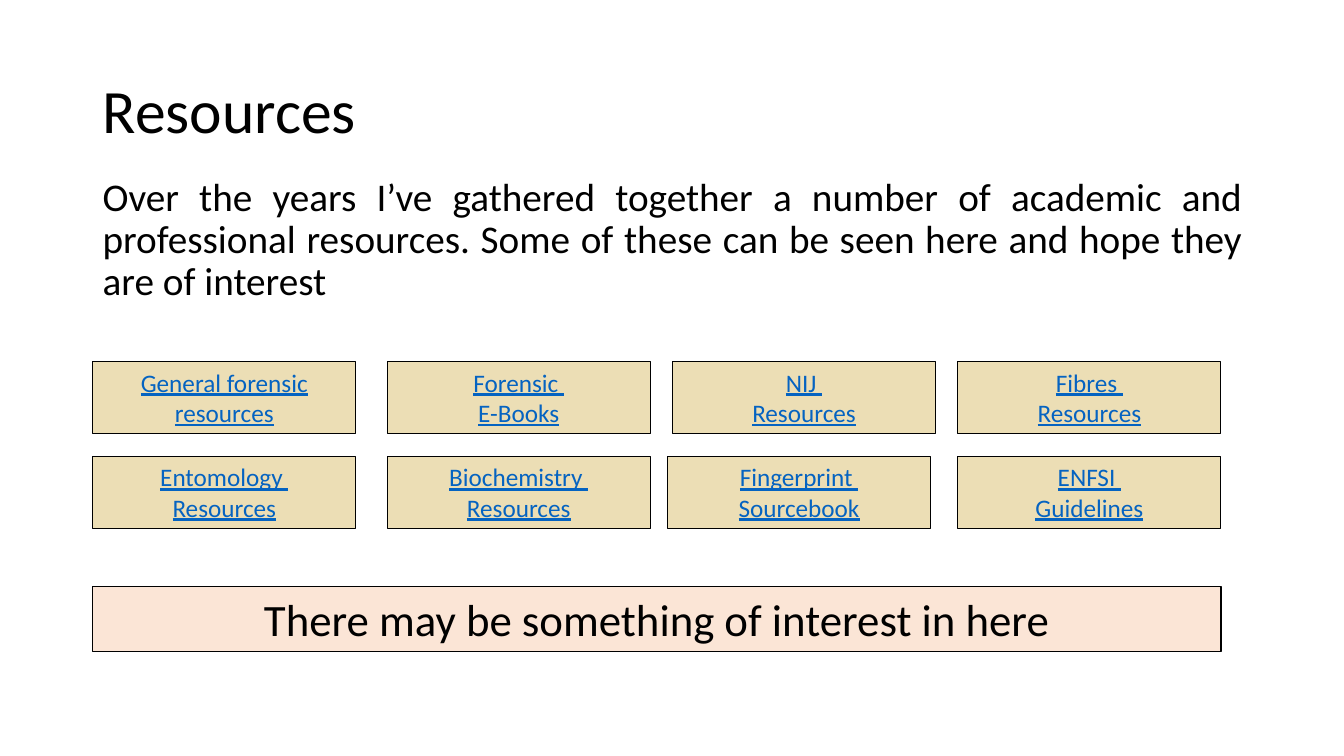
"""Build the Resources slide."""
import pptx
import pptx.dml.color
import pptx.enum.shapes
import pptx.enum.text
import pptx.oxml.ns
import pptx.util
from lxml import etree

Inches = pptx.util.Inches
ALIGN = pptx.enum.text.PP_ALIGN
ANCHOR = pptx.enum.text.MSO_ANCHOR
FIT = pptx.enum.text.MSO_AUTO_SIZE

COLORS = {"text": "000000", "link": "0563C1", "gold": "BF9000", "peach": "FBE5D6"}
LEFT = 0.92
COLS = [LEFT, 3.84, 6.67, 9.5]
ROWS = [3.59, 4.53]
LABELS = [
    ["General forensic resources", "Forensic \nE-Books", "NIJ \nResources", "Fibres \nResources"],
    ["Entomology \nResources", "Biochemistry \nResources", "Fingerprint \nSourcebook",
     "ENFSI \nGuidelines"],
]
NUDGE = {"Fingerprint \nSourcebook": -0.05}


def color(name):
    """Return the named colour."""
    return pptx.dml.color.RGBColor.from_string(COLORS[name])


def write(shape, text, size=18, ink="text", align=ALIGN.CENTER, anchor=ANCHOR.TOP,
          line=1.0, before=0, under=None, fit=FIT.SHAPE_TO_FIT_TEXT):
    """Fill a shape with text, one paragraph per line."""
    frame = shape.text_frame
    frame.word_wrap = True
    frame.auto_size = fit
    frame.vertical_anchor = anchor
    frame.text = text
    for para in frame.paragraphs:
        para.alignment = align
        para.line_spacing = line
        para.space_before = pptx.util.Pt(before)
        font = para.runs[0].font
        font.name = "Calibri"
        font.size = pptx.util.Pt(size)
        font.underline = under
        font.color.rgb = color(ink)


def add_text(slide, top, text, **style):
    """Add a text box across the slide."""
    box = slide.shapes.add_textbox(Inches(LEFT), Inches(top), Inches(11.5), Inches(1.45))
    write(box, text, line=0.9, fit=FIT.NONE, **style)


def add_box(slide, left, top, width, height, fill, text, alpha=None, **style):
    """Add an outlined rectangle with text."""
    box = slide.shapes.add_shape(
        pptx.enum.shapes.MSO_SHAPE.RECTANGLE,
        Inches(left), Inches(top), Inches(width), Inches(height))
    box.shadow.inherit = False
    box.fill.solid()
    box.fill.fore_color.rgb = color(fill)
    box.line.color.rgb = color("text")
    box.line.width = pptx.util.Pt(0.75)
    if alpha is not None:
        tint = box.fill._xPr.find(".//" + pptx.oxml.ns.qn("a:srgbClr"))
        etree.SubElement(tint, pptx.oxml.ns.qn("a:alpha"), val=str(alpha * 1000))
    write(box, text, **style)


def main():
    """Build and save the slide."""
    deck = pptx.Presentation()
    deck.slide_width = Inches(13.33)
    deck.slide_height = Inches(7.5)
    slide = deck.slides.add_slide(deck.slide_layouts[6])
    add_text(slide, 0.4, "Resources", size=44, align=ALIGN.LEFT, anchor=ANCHOR.MIDDLE)
    add_text(slide, 1.71,
             "Over the years I’ve gathered together a number of academic and professional "
             "resources. Some of these can be seen here and hope they are of interest",
             size=28, align=ALIGN.JUSTIFY, before=10)
    for top, labels in zip(ROWS, LABELS):
        for left, label in zip(COLS, labels):
            add_box(slide, left + NUDGE.get(label, 0), top, 2.61, 0.71, "gold", label,
                    alpha=29, ink="link", under=True)
    add_box(slide, LEFT, 5.82, 11.19, 0.64, "peach",
            "There may be something of interest in here", size=32)
    deck.save("out.pptx")


if __name__ == "__main__":
    main()
